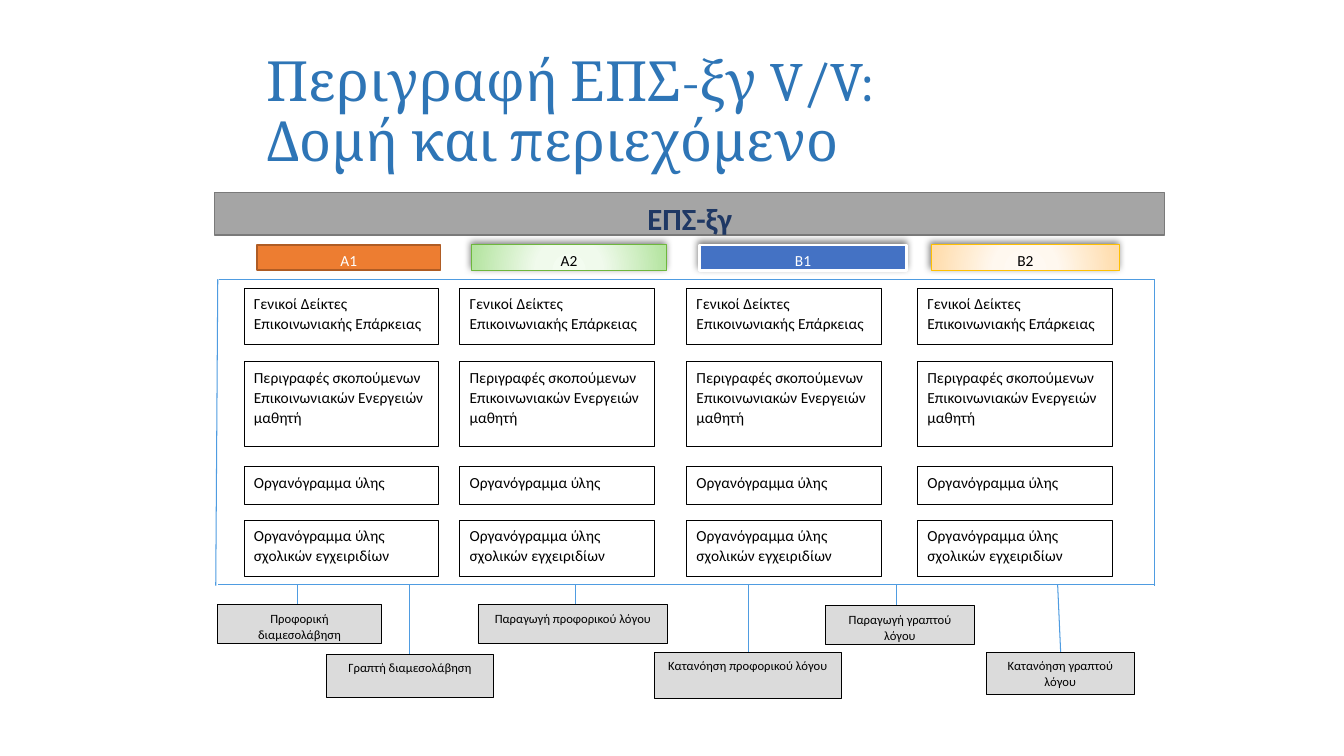
from pptx import Presentation
from pptx import util as u
from pptx.dml.color import RGBColor
from pptx.enum import shapes, text
from pptx.oxml import parse_xml
from pptx.oxml.ns import nsdecls, qn

EMU_PER_PX = 9144
COLORS = {
    "title": "2E75B6", "navy": "1F3864", "black": "000000", "white": "FFFFFF",
    "banner": "A5A5A5", "banner_edge": "7A7A7A", "frame": "4F9CE1", "skill": "DBDBDB",
    "orange": "ED7D31", "orange_edge": "AF5C24", "blue": "4472C4",
    "green_edge": "6EB73D", "gold_edge": "FFC000",
}
GRADIENTS = {
    "green": {0: "F3FCF0", 34: "F0FAEC", 100: "B4E4A0"},
    "gold": {0: "FFFAF4", 34: "FFF8EF", 100: "FFDCAB"},
}


def px(length):
    return u.Emu(length * EMU_PER_PX)


def rgb(name):
    return RGBColor.from_string(COLORS[name])


class Canvas:
    def __init__(self, slide):
        self.slide = slide

    def run(self, paragraph, words, size, color, bold=False, face="Calibri"):
        run = paragraph.add_run()
        run.text = words
        run.font.size = u.Pt(size)
        run.font.bold = bold
        run.font.name = face
        run.font.color.rgb = rgb(color)

    def title(self, area, lines):
        heading = self.slide.shapes.add_textbox(*map(px, area))
        frame = heading.text_frame
        frame.word_wrap = True
        frame.vertical_anchor = text.MSO_ANCHOR.MIDDLE
        paragraph = frame.paragraphs[0]
        paragraph.line_spacing = 0.9
        for index, line in enumerate(lines):
            if index:
                paragraph.add_line_break()
            self.run(paragraph, line, 39.6, "title", face="Cambria")

    def gradient(self, shape, stops):
        shape.fill.gradient()
        marks = "".join(
            f'<a:gs pos="{place * 1000}"><a:srgbClr val="{color}"/></a:gs>'
            for place, color in stops.items())
        radial = parse_xml(
            f'<a:gradFill {nsdecls("a")} rotWithShape="1"><a:gsLst>{marks}</a:gsLst>'
            '<a:path path="circle"><a:fillToRect l="50000" t="155000" r="50000" b="-55000"/>'
            '</a:path></a:gradFill>')
        properties = shape.element.spPr
        properties.replace(properties.find(qn("a:gradFill")), radial)

    def shadow(self, shape):
        shape.element.spPr.find(qn("a:effectLst")).append(parse_xml(
            f'<a:outerShdw {nsdecls("a")} blurRad="{u.Pt(5)}" dist="{u.Pt(2)}" dir="14700000" '
            'algn="ctr" rotWithShape="0"><a:srgbClr val="000000"><a:alpha val="50000"/>'
            '</a:srgbClr></a:outerShdw>'))

    def box(self, area, words, fill="white", edge="black", weight=0.5, size=11,
            color="black", bold=False, centered=True, shadow=False):
        shape = self.slide.shapes.add_shape(shapes.MSO_SHAPE.RECTANGLE, *map(px, area))
        shape.shadow.inherit = False
        if fill in GRADIENTS:
            self.gradient(shape, GRADIENTS[fill])
        else:
            shape.fill.solid()
            shape.fill.fore_color.rgb = rgb(fill)
        shape.line.color.rgb = rgb(edge)
        shape.line.width = u.Pt(weight)
        if shadow:
            self.shadow(shape)
        frame = shape.text_frame
        frame.word_wrap = True
        frame.vertical_anchor = text.MSO_ANCHOR.TOP
        paragraph = frame.paragraphs[0]
        paragraph.alignment = text.PP_ALIGN.CENTER if centered else text.PP_ALIGN.LEFT
        paragraph.line_spacing = 1.07
        paragraph.space_after = u.Pt(8)
        self.run(paragraph, words, size, color, bold)

    def line(self, *ends):
        connector = self.slide.shapes.add_connector(
            shapes.MSO_CONNECTOR.STRAIGHT, *map(px, ends))
        connector.line.color.rgb = rgb("frame")
        connector.line.width = u.Pt(0.75)
        connector.element.spPr.append(parse_xml(f'<a:effectLst {nsdecls("a")}/>'))


LEVELS = [
    ("Α1", 255, 182, dict(fill="orange", edge="orange_edge", weight=1, color="white")),
    ("Α2", 468, 193, dict(fill="green", edge="green_edge", weight=0.75, shadow=True)),
    ("Β1", 694, 205, dict(fill="blue", edge="white", weight=2, color="white", shadow=True)),
    ("Β2", 924, 186, dict(fill="gold", edge="gold_edge", weight=0.75, shadow=True)),
]
COLUMN_LEFTS = [242, 456, 681, 910]
CONTENTS = [
    ("Γενικοί Δείκτες Επικοινωνιακής Επάρκειας", 286, 56),
    ("Περιγραφές σκοπούμενων Επικοινωνιακών Ενεργειών μαθητή", 359, 84),
    ("Οργανόγραμμα ύλης", 463, 37),
    ("Οργανόγραμμα ύλης σχολικών εγχειριδίων", 516, 56),
]
FRAME_EDGES = [
    (214, 581, 216, 277), (1145, 581, 1145, 277),
    (217, 277, 1145, 277), (1146, 580, 216, 580),
]
SKILLS = [
    ("Κατανόηση γραπτού λόγου", (978, 647, 147, 42), 1049, 1052),
    ("Παραγωγή γραπτού λόγου", (819, 601, 147, 38), 889, 889),
    ("Κατανόηση προφορικού λόγου", (649, 647, 185, 46), 742, 742),
    ("Παραγωγή προφορικού λόγου", (474, 600, 188, 38), 571, 571),
    ("Γραπτή διαμεσολάβηση", (324, 649, 165, 43), 406, 406),
    ("Προφορική διαμεσολάβηση", (216, 600, 162, 38), 295, 295),
]


def main():
    deck = Presentation()
    deck.slide_width, deck.slide_height = px(1333), px(750)
    canvas = Canvas(deck.slides.add_slide(deck.slide_layouts[6]))

    canvas.title((254, 40, 988, 145), ["Περιγραφή ΕΠΣ-ξγ V/V: ", "Δομή και περιεχόμενο"])
    canvas.box((213, 191, 942, 42), "ΕΠΣ-ξγ", fill="banner", edge="banner_edge",
               weight=1, size=22, color="navy", bold=True)
    for level, left, width, style in LEVELS:
        canvas.box((left, 243, width, 25), level, **style)
    for left in COLUMN_LEFTS:
        for content, top, height in CONTENTS:
            canvas.box((left, top, 193, height), content, centered=False)
    for edge in FRAME_EDGES:
        canvas.line(*edge)
    for skill, area, start, end in SKILLS:
        canvas.line(start, 580, end, area[1])
        canvas.box(area, skill, fill="skill", size=9)

    deck.save("out.pptx")


if __name__ == "__main__":
    main()
